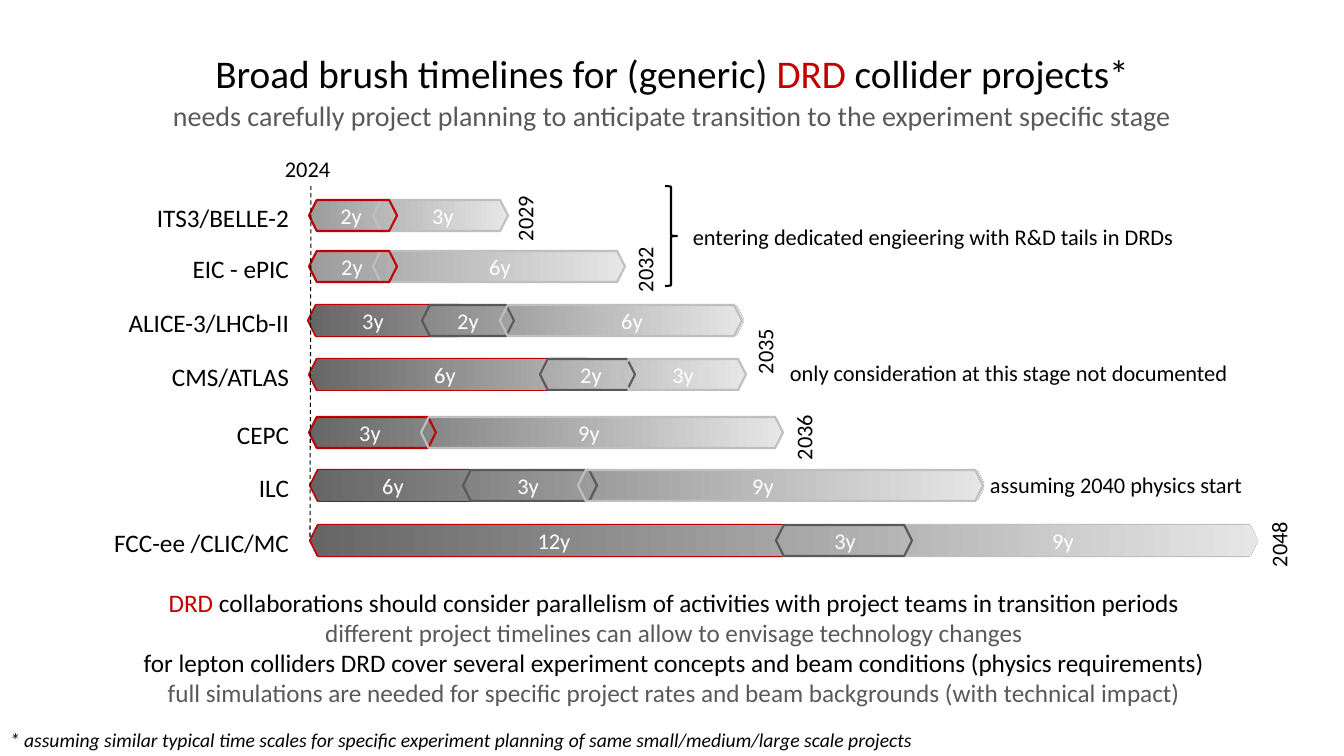
import pptx
import pptx.dml.color
import pptx.enum.dml
import pptx.enum.shapes
import pptx.enum.text
import pptx.oxml.ns
import pptx.util
from lxml import etree

EMU_PER_PX = 914400 / 100.8
BAR_HEIGHT = 31
LABEL_RIGHT = 299
BLACK, WHITE, RED, DARK, LIGHT = "000000", "FFFFFF", "C00000", "595959", "BFBFBF"
LEFT = pptx.enum.text.PP_ALIGN.LEFT
CENTER = pptx.enum.text.PP_ALIGN.CENTER
RIGHT = pptx.enum.text.PP_ALIGN.RIGHT
SHAPES = pptx.enum.shapes.MSO_SHAPE

# label, top, bars from back to front (left, right, style), durations (centre, text);
# a bar style is an outline colour, or a pair of gradient colours
EARLY, LONG = ("9C9C9C", "E6E6E6"), ("666666", "E6E6E6")
PROJECTS = [
    ("ITS3/BELLE-2", 200,
     [(309, 508, EARLY), (373, 508, LIGHT), (309, 397, RED)],
     [(351, "2y"), (443, "3y")]),
    ("EIC - ePIC", 251,
     [(309, 625, EARLY), (373, 625, LIGHT), (309, 397, RED)],
     [(352, "2y"), (500, "6y")]),
    ("ALICE-3/LHCb-II", 305,
     [(308, 466, RED), (309, 744, LONG), (422, 514, DARK), (500, 742, LIGHT)],
     [(373, "3y"), (468, "2y"), (632, "6y")]),
    ("CMS/ATLAS", 359,
     [(309, 596, RED), (310, 745, LONG), (540, 635, DARK), (621, 746, LIGHT)],
     [(445, "6y"), (591, "2y"), (683, "3y")]),
    ("CEPC", 417,
     [(309, 783, LONG), (309, 436, RED), (421, 783, LIGHT)],
     [(370, "3y"), (589, "9y")]),
    ("ILC", 470,
     [(310, 477, RED), (311, 985, LONG), (463, 597, DARK), (578, 983, LIGHT)],
     [(393, "6y"), (528, "3y"), (763, "9y")]),
    ("FCC-ee /CLIC/MC", 525,
     [(895, 1257, LIGHT), (310, 790, RED), (311, 1258, LONG), (776, 912, DARK)],
     [(554, "12y"), (845, "3y"), (1063, "9y")]),
]
# centre x, centre y, year
END_YEARS = [(524, 214, "2029"), (644, 265, "2032"), (764, 347, "2035"),
             (803, 433, "2036"), (1278, 540, "2048")]
# left, top, width, text
REMARKS = [
    (275, 150, 73, "2024"),
    (683, 218, 579, "entering dedicated engieering with R&D tails in DRDs"),
    (780, 354, 518, "only consideration at this stage not documented"),
    (980, 466, 308, "assuming 2040 physics start"),
]
TITLE = [
    (28, [("Broad brush timelines for (generic) ", BLACK), ("DRD", RED),
          (" collider projects*", BLACK)]),
    (20, [("needs carefully project planning to anticipate transition "
           "to the experiment specific stage", DARK)]),
]
CONCLUSIONS = [
    (18, [("DRD", RED),
          (" collaborations should consider parallelism of activities with "
           "project teams in transition periods", BLACK)]),
    (18, [("different project timelines can allow to envisage technology changes", DARK)]),
    (18, [("for lepton colliders DRD cover several experiment concepts and beam "
           "conditions (physics requirements)", BLACK)]),
    (18, [("full simulations are needed for specific project rates and beam "
           "backgrounds (with technical impact)", DARK)]),
]
FOOTNOTE = ("* assuming similar typical time scales for specific experiment planning "
            "of same small/medium/large scale projects")


def px(length):
    return pptx.util.Emu(round(length * EMU_PER_PX))


def rgb(color):
    return pptx.dml.color.RGBColor.from_string(color)


class TimelineSlide:
    font_name = "Calibri"

    def __init__(self, presentation):
        self.slide = presentation.slides.add_slide(presentation.slide_layouts[6])

    def text(self, left, top, width, height, paragraphs, align=LEFT,
             rotation=0, italic=False, space_after=0):
        """Paragraphs are (size, [(text, colour), ...]) pairs."""
        box = self.slide.shapes.add_textbox(px(left), px(top), px(width), px(height))
        box.rotation = rotation
        frame = box.text_frame
        frame.word_wrap = True
        for index, (size, runs) in enumerate(paragraphs):
            paragraph = frame.add_paragraph() if index else frame.paragraphs[0]
            paragraph.alignment = align
            if space_after and index < len(paragraphs) - 1:
                paragraph.space_after = pptx.util.Pt(space_after)
            paragraph.font.name = self.font_name
            paragraph.font.size = pptx.util.Pt(size)
            paragraph.font.italic = italic
            colors = {color for _, color in runs}
            if len(colors) == 1:
                paragraph.font.color.rgb = rgb(runs[0][1])
            for words, color in runs:
                run = paragraph.add_run()
                run.text = words
                if len(colors) > 1:
                    run.font.color.rgb = rgb(color)

    def line_text(self, left, top, width, words, size=16, color=BLACK, **options):
        self.text(left, top, width, 37, [(size, [(words, color)])], **options)

    def outline(self, kind, left, top, width, height, color):
        shape = self.slide.shapes.add_shape(kind, px(left), px(top), px(width), px(height))
        shape.shadow.inherit = False
        shape.fill.background()
        shape.line.color.rgb = rgb(color)
        shape.line.width = pptx.util.Pt(1.5)
        return shape

    def bar(self, left, right, top, style):
        """Draw a phase outline, or a whole gradient bar when style is a colour pair."""
        color = style if isinstance(style, str) else style[0]
        shape = self.outline(SHAPES.HEXAGON, left, top, right - left, BAR_HEIGHT, color)
        if color != style:
            shape.line.fill.background()
            shape.fill.gradient()
            shape.fill.gradient_angle = 0
            for position, (stop, shade) in enumerate(zip(shape.fill.gradient_stops, style)):
                stop.position = position
                stop.color.rgb = rgb(shade)

    def dashed_line(self, x1, y1, x2, y2):
        line = self.slide.shapes.add_connector(
            pptx.enum.shapes.MSO_CONNECTOR.STRAIGHT, px(x1), px(y1), px(x2), px(y2))
        line.line.color.rgb = rgb(BLACK)
        line.line.width = pptx.util.Pt(0.75)
        line.line.dash_style = pptx.enum.dml.MSO_LINE.DASH
        etree.SubElement(line._element.spPr, pptx.oxml.ns.qn("a:effectLst"))

    def closing_brace(self, left, top, width, height):
        brace = self.outline(SHAPES.LEFT_BRACE, left, top, width, height, BLACK)
        brace.adjustments[0] = 0.08
        brace.adjustments[1] = 0.5
        brace.rotation = 180

    def project(self, label, top, bars, durations):
        middle = top + BAR_HEIGHT // 2
        self.line_text(LABEL_RIGHT - 252, middle - 18, 252, label, size=18, align=RIGHT)
        for left, right, style in bars:
            self.bar(left, right, top, style)
        for center, words in durations:
            self.line_text(center - 35, middle - 18, 70, words, color=WHITE, align=CENTER)


def main():
    presentation = pptx.Presentation()
    presentation.slide_width = px(1344)
    presentation.slide_height = px(756)
    timeline = TimelineSlide(presentation)
    timeline.text(18, 44, 1308, 95, TITLE, align=CENTER, space_after=2)
    timeline.text(44, 582, 1260, 132, CONCLUSIONS, align=CENTER)
    for project in PROJECTS:
        timeline.project(*project)
    timeline.dashed_line(311, 186, 310, 540)
    for x, y, year in END_YEARS:
        timeline.line_text(x - 36, y - 18, 73, year, rotation=270)
    for remark in REMARKS:
        timeline.line_text(*remark)
    timeline.closing_brace(665, 186, 12, 100)
    timeline.line_text(0, 723, 1033, FOOTNOTE, size=14, italic=True)
    presentation.save("out.pptx")


if __name__ == "__main__":
    main()
